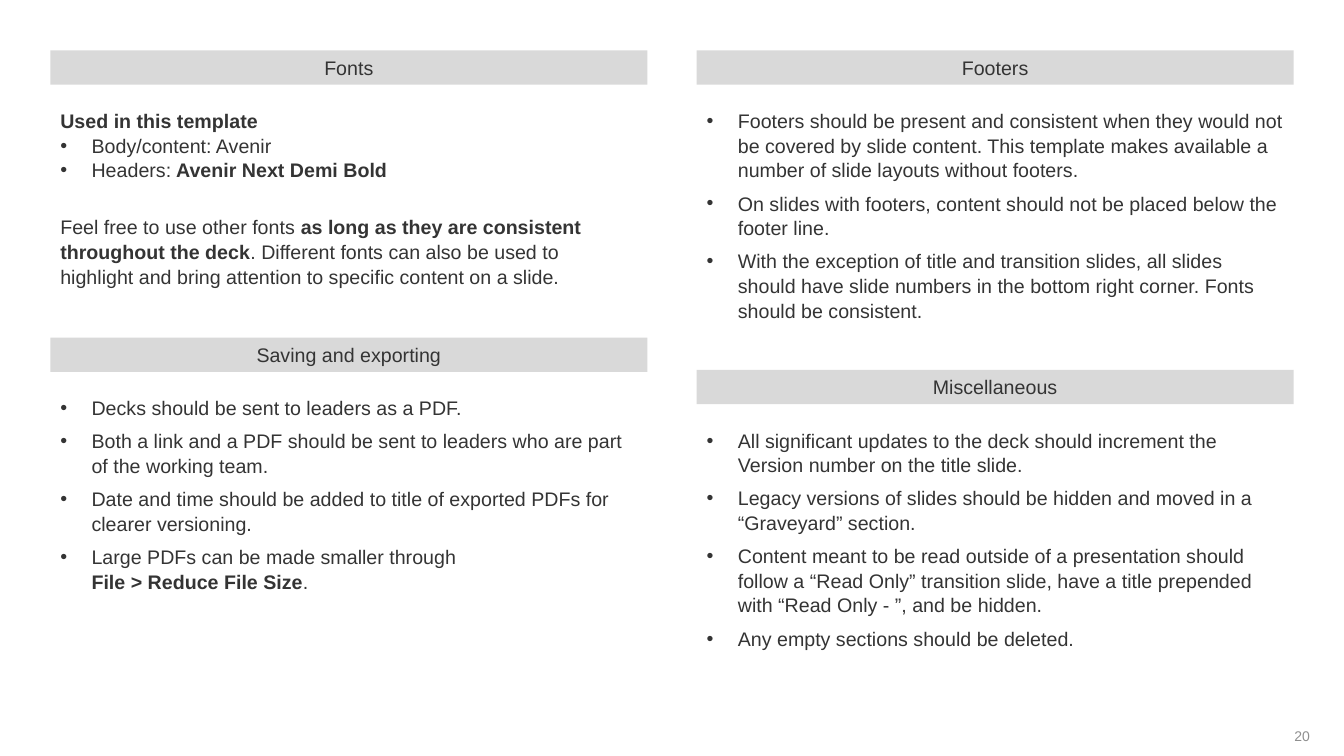
"""Builds the deck guidelines slide: four titled sections in two columns."""
from lxml.etree import SubElement
from pptx import Presentation
from pptx.dml.color import RGBColor
from pptx.enum.shapes import MSO_SHAPE
from pptx.enum.text import MSO_ANCHOR, PP_ALIGN
from pptx.oxml.ns import qn
from pptx.util import Inches, Pt

COLORS = {"bar": "D9D9D9", "text": "343434", "number": "8F8F8F"}
LEFT, RIGHT, WIDTH, BAR_HEIGHT, BODY_OFFSET = 0.5, 6.91, 5.92, 0.34, 0.52

# Each paragraph: bulleted, space before in points, text with **bold** parts.
SECTIONS = [
    (LEFT, 0.5, 1.83, "Fonts", [
        (False, 0, "**Used in this template**"),
        (True, 0, "Body/content: Avenir"),
        (True, 0, "Headers:** Avenir Next Demi Bold**"),
        (False, 23, "Feel free to use other fonts **as long as they are consistent "
                    "throughout the deck**. Different fonts can also be used to "
                    "highlight and bring attention to specific content on a slide."),
    ]),
    (LEFT, 3.35, 2, "Saving and exporting", [
        (True, 6, "Decks should be sent to leaders as a PDF."),
        (True, 6, "Both a link and a PDF should be sent to leaders who are part "
                  "of the working team."),
        (True, 6, "Date and time should be added to title of exported PDFs for "
                  "clearer versioning."),
        (True, 6, "Large PDFs can be made smaller through\n**File > Reduce File Size**."),
    ]),
    (RIGHT, 0.5, 2.15, "Footers", [
        (True, 6, "Footers should be present and consistent when they would not be "
                  "covered by slide content. This template makes available a number "
                  "of slide layouts without footers."),
        (True, 6, "On slides with footers, content should not be placed below the "
                  "footer line."),
        (True, 6, "With the exception of title and transition slides, all slides "
                  "should have slide numbers in the bottom right corner. Fonts "
                  "should be consistent."),
    ]),
    (RIGHT, 3.67, 2.24, "Miscellaneous", [
        (True, 6, "All significant updates to the deck should increment the Version "
                  "number on the title slide."),
        (True, 6, "Legacy versions of slides should be hidden and moved in a "
                  "“Graveyard” section."),
        (True, 6, "Content meant to be read outside of a presentation should follow "
                  "a “Read Only” transition slide, have a title prepended with "
                  "“Read Only - ”, and be hidden."),
        (True, 6, "Any empty sections should be deleted."),
    ]),
]


def add_text(p, text, size=14, color="text"):
    for i, part in enumerate(text.split("**")):
        if not part:
            continue
        r = p.add_run()
        r.text = part.rstrip("\n")
        r.font.name = "Arial"
        r.font.size = Pt(size)
        r.font.bold = i % 2 == 1
        r.font.color.rgb = RGBColor.from_string(COLORS[color])
        if part.endswith("\n"):
            p.add_line_break()


def add_bullet(p):
    pPr = p._p.get_or_add_pPr()
    pPr.set("marL", str(Inches(0.31)))
    pPr.set("indent", str(Inches(-0.31)))
    SubElement(pPr, qn("a:buFont")).set("typeface", "Arial")
    SubElement(pPr, qn("a:buChar")).set("char", "•")


prs = Presentation()
prs.slide_width, prs.slide_height = Inches(13.33), Inches(7.5)
s = prs.slides.add_slide(prs.slide_layouts[6])

for left, top, height, title, paragraphs in SECTIONS:
    bar = s.shapes.add_shape(MSO_SHAPE.RECTANGLE, Inches(left), Inches(top),
                             Inches(WIDTH), Inches(BAR_HEIGHT))
    bar.shadow.inherit = False
    bar.fill.solid()
    bar.fill.fore_color.rgb = RGBColor.from_string(COLORS["bar"])
    bar.line.fill.background()
    bar.text_frame.vertical_anchor = MSO_ANCHOR.MIDDLE
    p = bar.text_frame.paragraphs[0]
    p.alignment = PP_ALIGN.CENTER
    add_text(p, title)

    body = s.shapes.add_textbox(Inches(left), Inches(top + BODY_OFFSET),
                                Inches(WIDTH), Inches(height))
    tf = body.text_frame
    tf.word_wrap = True
    for i, (bulleted, space, text) in enumerate(paragraphs):
        p = tf.add_paragraph() if i else tf.paragraphs[0]
        p.line_spacing = 1.05
        p.space_before = Pt(space)
        if bulleted:
            add_bullet(p)
        add_text(p, text)

number = s.shapes.add_textbox(Inches(12.49), Inches(7.1), Inches(0.6), Inches(0.4))
tf = number.text_frame
tf.word_wrap = True
tf.vertical_anchor = MSO_ANCHOR.MIDDLE
p = tf.paragraphs[0]
p.alignment = PP_ALIGN.RIGHT
add_text(p, "20", 10, "number")

prs.save("out.pptx")
